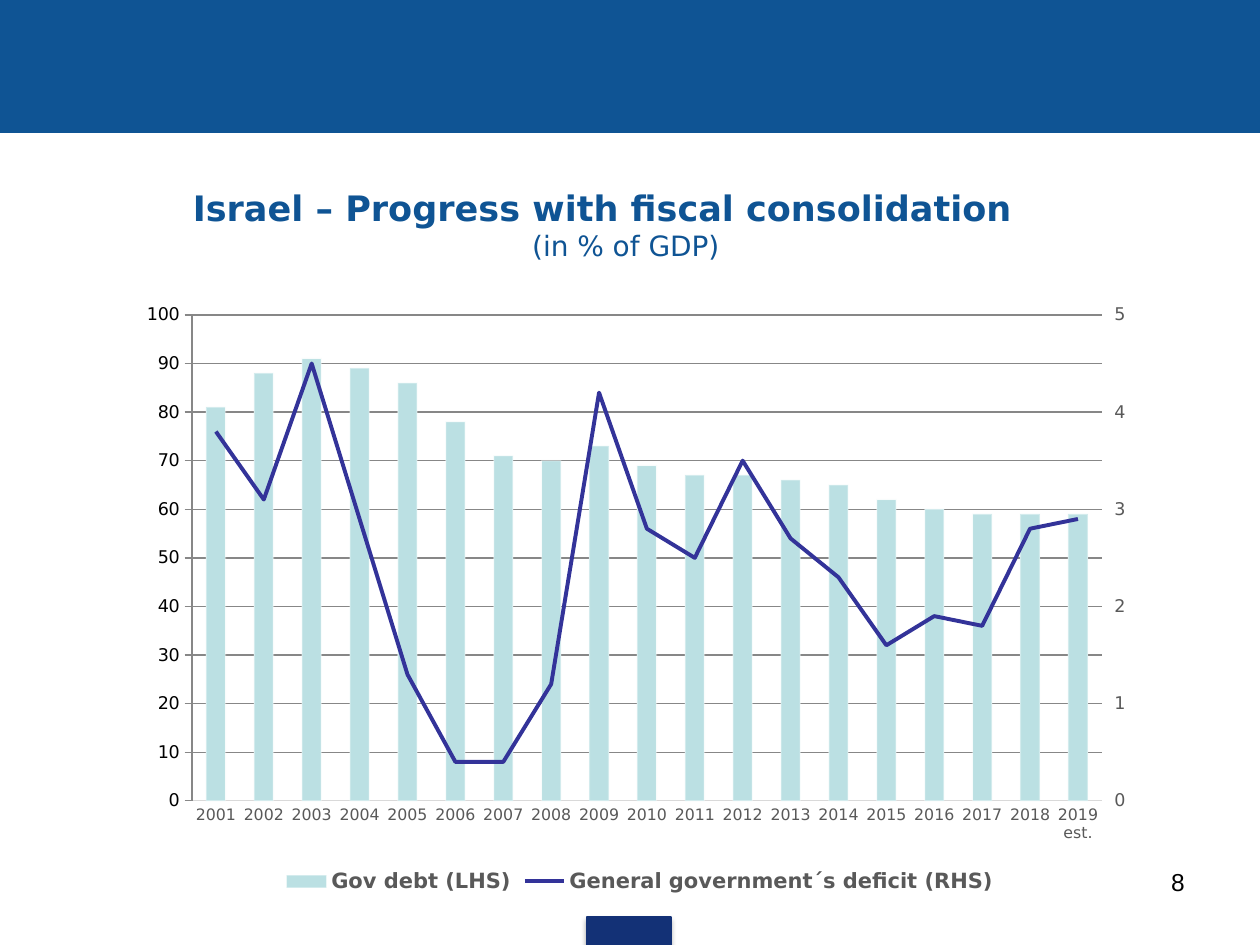
from lxml import etree
from pptx import Presentation
from pptx.chart.axis import ValueAxis
from pptx.chart.data import CategoryChartData
from pptx.dml.color import RGBColor
from pptx.enum.chart import XL_CHART_TYPE, XL_LEGEND_POSITION, XL_MARKER_STYLE, XL_TICK_MARK
from pptx.enum.shapes import MSO_SHAPE
from pptx.enum.text import MSO_ANCHOR, PP_ALIGN
from pptx.oxml import parse_xml
from pptx.oxml.ns import nsdecls, qn
from pptx.util import Emu, Pt

PX = 914400 / 126
BLUE, NAVY, GREY, RULE = "0F5494", "133176", "595959", "D9D9D9"
FONT = "DejaVu Sans"

YEARS = [str(y) for y in range(2001, 2019)] + ["2019 est."]
DEBT = [81, 88, 91, 89, 86, 78, 71, 70, 73, 69, 67, 67, 66, 65, 62, 60, 59, 59, 59]
DEFICIT = [3.8, 3.1, 4.5, 2.9, 1.3, 0.4, 0.4, 1.2, 4.2, 2.8,
           2.5, 3.5, 2.7, 2.3, 1.6, 1.9, 1.8, 2.8, 2.9]


def px(n):
    return Emu(round(n * PX))


def rgb(value):
    return RGBColor.from_string(value)


def set_attrs(obj, **values):
    for name, value in values.items():
        setattr(obj, name, value)


def set_font(font, size, color, name=FONT, bold=False):
    set_attrs(font, size=Pt(size), name=name, bold=bold)
    font.color.rgb = rgb(color)


def set_line(line, color, width=0.75):
    line.color.rgb = rgb(color)
    line.width = Pt(width)


def add_bar(s, box, color):
    sp = s.shapes.add_shape(MSO_SHAPE.RECTANGLE, *map(px, box))
    sp.shadow.inherit = False
    sp.fill.solid()
    sp.fill.fore_color.rgb = rgb(color)
    set_line(sp.line, color)
    return sp


def add_text(s, box, align, anchor):
    sp = s.shapes.add_textbox(*map(px, box))
    tf = sp.text_frame
    set_attrs(tf, word_wrap=True, vertical_anchor=anchor)
    p = tf.paragraphs[0]
    p.alignment = align
    return p


def add_run(p, text, *font, **kw):
    r = p.add_run()
    r.text = text
    set_font(r.font, *font, **kw)


def add_frame(s, width):
    # Header band, footer tab with a soft shadow, page number
    add_bar(s, (0, 0, width, 132), BLUE)
    tab = add_bar(s, (587, 917, 84, 28), NAVY)
    effects = tab._element.spPr.find(qn("a:effectLst"))
    effects.append(parse_xml(
        f'<a:outerShdw {nsdecls("a")} blurRad="{Pt(3.1)}" dist="{Pt(1.8)}" dir="5400000" '
        'rotWithShape="0"><a:srgbClr val="000000"><a:alpha val="35000"/></a:srgbClr></a:outerShdw>'))
    p = add_text(s, (903, 861, 294, 65), PP_ALIGN.RIGHT, MSO_ANCHOR.TOP)
    add_run(p, "8", 14, "000000", name="Arial")


def add_title(s, box):
    p = add_text(s, box, PP_ALIGN.CENTER, MSO_ANCHOR.MIDDLE)
    indent = px(47)
    pPr = p._p.get_or_add_pPr()
    pPr.set("marL", str(indent))
    pPr.set("indent", str(-indent))
    add_run(p, "Israel – Progress with fiscal consolidation", 20, BLUE, bold=True)
    p.add_line_break()
    add_run(p, "(in % of GDP)", 16, BLUE)


def move_to_right_axis(chart):
    # Turn the second series into a line on a second pair of axes
    area = chart._chartSpace.chart.plotArea
    bars = area.find(qn("c:barChart"))
    ser = bars.findall(qn("c:ser"))[1]
    for el in ser.findall(qn("c:invertIfNegative")):
        ser.remove(el)
    line = parse_xml(
        f'<c:lineChart {nsdecls("c")}><c:grouping val="standard"/><c:varyColors val="0"/>'
        '<c:marker val="1"/><c:axId val="5001"/><c:axId val="5002"/></c:lineChart>')
    line.insert(2, ser)
    bars.addnext(line)
    last = area.findall(qn("c:valAx"))[-1]
    for tag, own, other, pos, hidden, extra in (
            ("valAx", 5002, 5001, "r", 0, '<c:crosses val="max"/>'),
            ("catAx", 5001, 5002, "b", 1, '<c:crosses val="autoZero"/>')):
        last.addnext(parse_xml(
            f'<c:{tag} {nsdecls("c")}><c:axId val="{own}"/>'
            f'<c:scaling><c:orientation val="minMax"/></c:scaling><c:delete val="{hidden}"/>'
            f'<c:axPos val="{pos}"/><c:numFmt formatCode="0" sourceLinked="0"/>'
            '<c:majorTickMark val="out"/><c:minorTickMark val="none"/>'
            f'<c:tickLblPos val="nextTo"/><c:crossAx val="{other}"/>{extra}</c:{tag}>'))
    return ValueAxis(area.findall(qn("c:valAx"))[1])


def set_plot_box(chart, box, plot):
    # Fix the inner plot area as fractions of the chart box
    left, top, width, height = box
    x, y, w, h = plot
    parts = {"x": (x - left) / width, "y": (y - top) / height, "w": w / width, "h": h / height}
    area = chart._chartSpace.chart.plotArea
    for el in area.findall(qn("c:layout")):
        area.remove(el)
    layout = parse_xml(
        f'<c:layout {nsdecls("c")}><c:manualLayout><c:layoutTarget val="inner"/>'
        '<c:xMode val="edge"/><c:yMode val="edge"/></c:manualLayout></c:layout>')
    for name, value in parts.items():
        etree.SubElement(layout[0], qn(f"c:{name}")).set("val", f"{value:.4f}")
    area.insert(0, layout)


def add_fiscal_chart(s, box):
    data = CategoryChartData()
    data.categories = YEARS
    data.add_series("Gov debt (LHS)", DEBT, "0")
    data.add_series("General government´s deficit (RHS)", DEFICIT, "0.0")
    chart = s.shapes.add_chart(XL_CHART_TYPE.COLUMN_CLUSTERED, *map(px, box), data).chart
    set_attrs(chart, has_title=False, has_legend=True)
    set_font(chart.font, 10, "000000")
    set_attrs(chart.legend, position=XL_LEGEND_POSITION.BOTTOM, include_in_layout=False)
    set_font(chart.legend.font, 12, GREY, bold=True)
    right = move_to_right_axis(chart)
    set_plot_box(chart, box, (192, 315, 910, 486))

    # Columns and line
    columns, lines = chart.plots
    set_attrs(columns, gap_width=150, vary_by_categories=False)
    debt, deficit = columns.series[0], lines.series[0]
    debt.format.fill.solid()
    debt.format.fill.fore_color.rgb = rgb("BBE0E3")
    set_line(debt.format.line, "F1F9F9")
    edge = debt._element.spPr.find(qn("a:ln")).find(".//" + qn("a:srgbClr"))
    etree.SubElement(edge, qn("a:alpha")).set("val", "46000")
    set_line(deficit.format.line, "333399", 2.25)
    deficit.smooth = False
    deficit.marker.style = XL_MARKER_STYLE.NONE

    # Axes
    none, out = XL_TICK_MARK.NONE, XL_TICK_MARK.OUTSIDE
    years, left = chart.category_axis, chart.value_axis
    for axis, size, tick in ((years, 9, none), (left, 10, none), (right, 10, out)):
        set_attrs(axis, major_tick_mark=tick, minor_tick_mark=none)
        set_font(axis.tick_labels.font, size, GREY)
    set_line(years.format.line, RULE)
    for axis, top, step in ((left, 100, 10), (right, 5, 1)):
        set_attrs(axis, minimum_scale=0, maximum_scale=top, major_unit=step)
        set_attrs(axis.tick_labels, number_format="0", number_format_is_linked=False)
        axis.format.line.fill.background()
    left.has_major_gridlines = True
    set_line(left.major_gridlines.format.line, RULE)


def main():
    prs = Presentation()
    set_attrs(prs, slide_width=px(1260), slide_height=px(945))
    s = prs.slides.add_slide(prs.slide_layouts[6])
    add_frame(s, 1260)
    add_fiscal_chart(s, (134, 294, 1012, 605))
    add_title(s, (47, 174, 1111, 100))
    prs.save("out.pptx")


if __name__ == "__main__":
    main()
